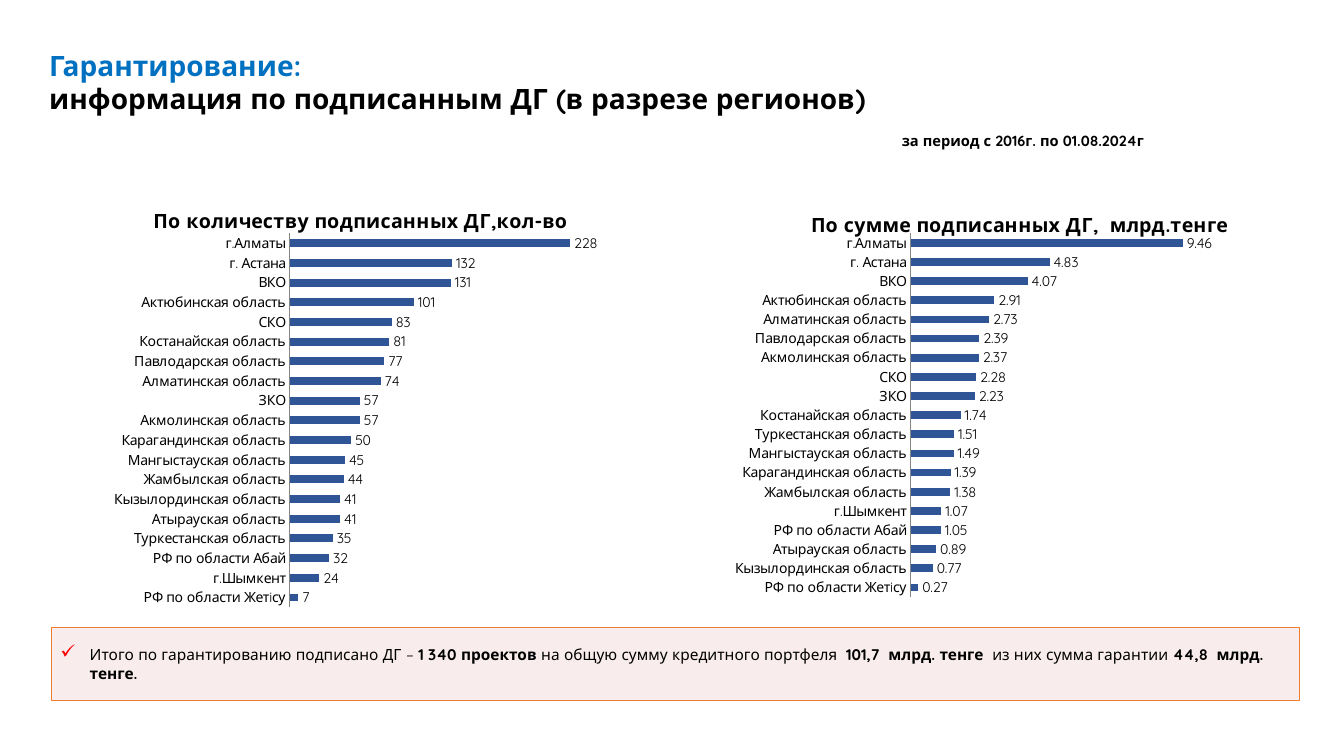
from dataclasses import dataclass

from lxml import etree
from pptx import Presentation
from pptx.chart.data import CategoryChartData
from pptx.dml.color import RGBColor
from pptx.enum.chart import XL_CHART_TYPE, XL_LABEL_POSITION, XL_TICK_MARK
from pptx.enum.shapes import MSO_SHAPE
from pptx.enum.text import MSO_ANCHOR, MSO_AUTO_SIZE, PP_ALIGN
from pptx.oxml.ns import qn
from pptx.util import Cm, Pt

BAR = XL_CHART_TYPE.BAR_CLUSTERED
OUTER = XL_LABEL_POSITION.OUTSIDE_END
NO_TICK = XL_TICK_MARK.NONE
RECT = MSO_SHAPE.RECTANGLE
MIDDLE = MSO_ANCHOR.MIDDLE
GROW = MSO_AUTO_SIZE.SHAPE_TO_FIT_TEXT
LEFT = PP_ALIGN.LEFT


@dataclass(frozen=True)
class Theme:
    font: str = "Quicksand"
    ink: str = "000000"
    head: str = "0070C0"
    bar: str = "2F5597"
    axis: str = "868686"
    pale: str = "F2DCDB"
    edge: str = "ED7D31"
    check: str = "FF0000"
    big: float = 20
    chart: float = 14
    note: float = 11
    date: float = 10.5
    label: float = 10


T = Theme()

COUNTS = [
    ("РФ по области Жетiсу", 7), ("г.Шымкент", 24), ("РФ по области Абай", 32),
    ("Туркестанская область", 35), ("Атырауская область", 41),
    ("Кызылординская область", 41), ("Жамбылская область", 44),
    ("Мангыстауская область", 45), ("Карагандинская область", 50),
    ("Акмолинская область", 57), ("ЗКО", 57), ("Алматинская область", 74),
    ("Павлодарская область", 77), ("Костанайская область", 81), ("СКО", 83),
    ("Актюбинская область", 101), ("ВКО", 131), ("г. Астана", 132),
    ("г.Алматы", 228),
]
SUMS = [
    ("РФ по области Жетiсу", 0.27), ("Кызылординская область", 0.77),
    ("Атырауская область", 0.89), ("РФ по области Абай", 1.05),
    ("г.Шымкент", 1.07), ("Жамбылская область", 1.38),
    ("Карагандинская область", 1.39), ("Мангыстауская область", 1.49),
    ("Туркестанская область", 1.51), ("Костанайская область", 1.74),
    ("ЗКО", 2.23), ("СКО", 2.28), ("Акмолинская область", 2.37),
    ("Павлодарская область", 2.39), ("Алматинская область", 2.73),
    ("Актюбинская область", 2.91), ("ВКО", 4.07), ("г. Астана", 4.83),
    ("г.Алматы", 9.46),
]


def rgb(code):
    return RGBColor.from_string(code)


def style(font, size, color=T.ink, bold=False):
    font.name, font.size, font.bold = T.font, Pt(size), bold
    font.color.rgb = rgb(color)


def write(para, text, **form):
    """Add one run with its format."""
    run = para.add_run()
    run.text = text
    style(run.font, **form)


def add(parent, tag, **attrs):
    return etree.SubElement(parent, qn(tag), attrs)


def text_box(slide, box, wrap):
    frame = slide.shapes.add_textbox(*map(Cm, box)).text_frame
    frame.word_wrap, frame.auto_size = wrap, GROW
    return frame.paragraphs[0]


# Heading and period
def heading(slide, box):
    para = text_box(slide, box, True)
    write(para, "Гарантирование: ", size=T.big, color=T.head, bold=True)
    para.add_line_break()
    write(para, "информация по подписанным ДГ (в разрезе регионов)",
          size=T.big, bold=True)


def period(slide, box):
    para = text_box(slide, box, False)
    write(para, "за период с 2016г. по 01.08.2024г", size=T.date, bold=True)


# Manual chart layout, in shares of the chart area
def layout(after, x, y, w=None, h=None):
    node = etree.Element(qn("c:layout"))
    man = add(node, "c:manualLayout")
    if w:
        add(man, "c:layoutTarget", val="inner")
    add(man, "c:xMode", val="edge")
    add(man, "c:yMode", val="edge")
    for key, val in zip("xywh", (x, y, w, h)):
        if val is not None:
            add(man, "c:" + key, val=str(val))
    for old in after.getparent().findall(qn("c:layout")):
        after.getparent().remove(old)
    after.addprevious(node)


# Bar chart of regions
def bars(slide, box, title, rows, top, form, head, plot):
    data = CategoryChartData(number_format=form)
    data.categories = [name for name, _ in rows]
    data.add_series("Series 1", [val for _, val in rows])
    chart = slide.shapes.add_chart(BAR, *map(Cm, box), data).chart
    chart.has_legend = False
    style(chart.font, T.label)

    chart.has_title = True
    write(chart.chart_title.text_frame.paragraphs[0], title,
          size=T.chart, bold=True)
    chart.chart_title.include_in_layout = False
    root = chart._chartSpace.chart
    layout(root.find(qn("c:title")).find(qn("c:overlay")), *head)
    layout(root.plotArea.find(qn("c:barChart")), *plot)

    cat = chart.category_axis
    cat.major_tick_mark = cat.minor_tick_mark = NO_TICK
    cat.has_major_gridlines = False
    cat.format.line.color.rgb = rgb(T.axis)
    cat.format.line.width = Pt(0.75)
    style(cat.tick_labels.font, T.label)
    val = chart.value_axis
    val.minimum_scale, val.maximum_scale = 0, top
    val.has_major_gridlines = val.visible = False

    group = chart.plots[0]
    group.gap_width, group.vary_by_categories = 150, False
    fill = group.series[0].format.fill
    fill.solid()
    fill.fore_color.rgb = rgb(T.bar)
    group.has_data_labels = True
    labels = group.data_labels
    labels.show_value, labels.position = True, OUTER
    labels.number_format, labels.number_format_is_linked = form, False
    style(labels.font, T.label)


# Summary panel
def summary(slide, box):
    panel = slide.shapes.add_shape(RECT, *map(Cm, box))
    panel.shadow.inherit = False
    panel.fill.solid()
    panel.fill.fore_color.rgb = rgb(T.pale)
    tint = panel.fill._xPr.find(qn("a:solidFill"))[0]
    add(tint, "a:alpha", val="50000")
    panel.line.color.rgb = rgb(T.edge)
    panel.line.width = Pt(1)

    frame = panel.text_frame
    frame.word_wrap, frame.vertical_anchor = True, MIDDLE
    frame.margin_left = frame.margin_right = Cm(0.2)
    frame.margin_top = frame.margin_bottom = Cm(0.1)
    para = frame.paragraphs[0]
    props = para._p.get_or_add_pPr()
    props.set("marL", str(Cm(0.76)))
    props.set("indent", str(-Cm(0.74)))
    add(add(props, "a:buClr"), "a:srgbClr", val=T.check)
    add(props, "a:buSzPct", val="125000")
    add(props, "a:buChar", char="✓")
    para.alignment, para.space_after = LEFT, Pt(6)
    parts = ["Итого по гарантированию подписано ДГ – ", "1 340 проектов ",
             "на общую сумму кредитного портфеля  ", "101,7  млрд. тенге  ",
             "из них сумма гарантии ", "44,8  млрд. тенге."]
    for i, part in enumerate(parts):
        write(para, part, size=T.note, bold=i % 2 == 1)


def main():
    deck = Presentation()
    deck.slide_width, deck.slide_height = Cm(33.87), Cm(19.05)
    slide = deck.slides.add_slide(deck.slide_layouts[6])
    heading(slide, (0.99, 1.09, 21.79, 1.96))
    period(slide, (22.48, 3.2, 6.71, 0.71))
    summary(slide, (1.3, 15.82, 31.45, 1.83))
    bars(slide, (1.9, 4.55, 14.45, 11.3),
         "По количеству подписанных ДГ,кол-во ", COUNTS, 250, "General",
         (0.13, 0.05), (0.374, 0.118, 0.536, 0.834))
    bars(slide, (17.17, 4.55, 14.45, 10.9),
         "По сумме подписанных ДГ,  млрд.тенге", SUMS, 10, "#,##0.00",
         (0.22, 0.06), (0.4, 0.122, 0.502, 0.841))
    deck.save("out.pptx")


if __name__ == "__main__":
    main()
